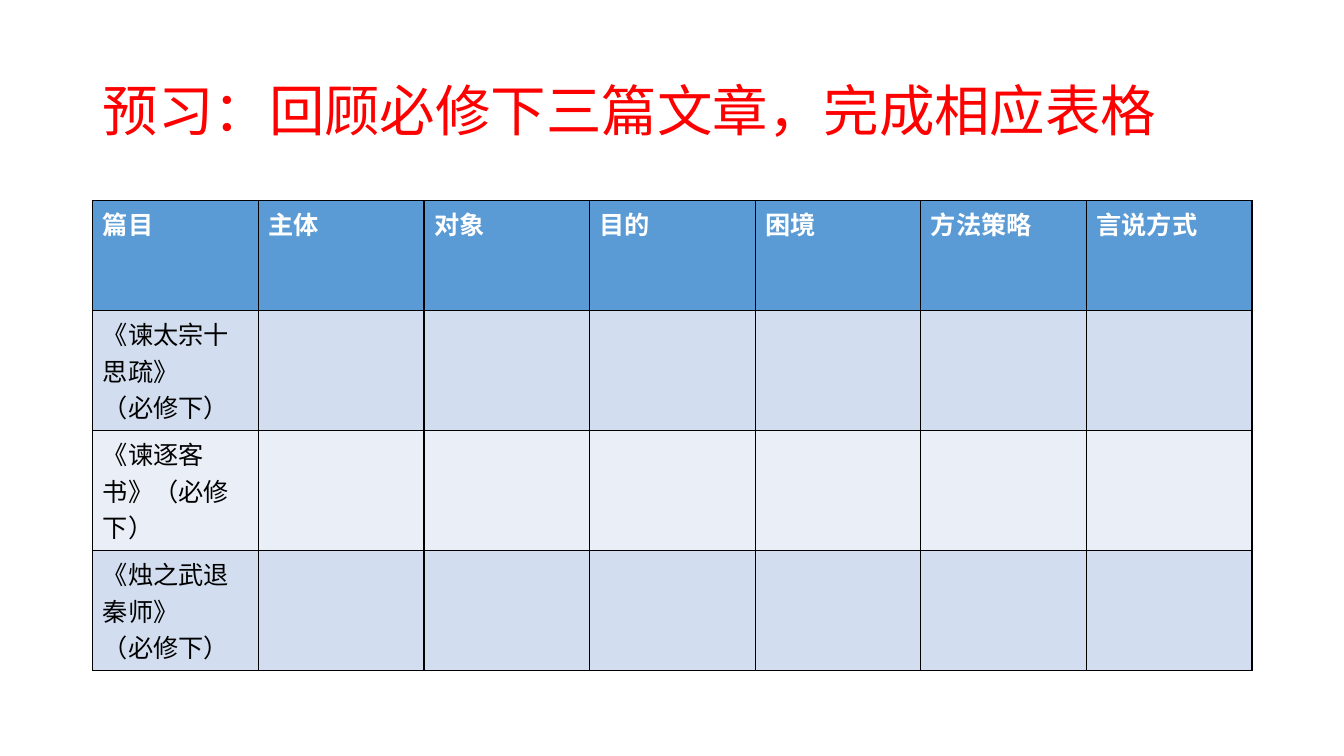
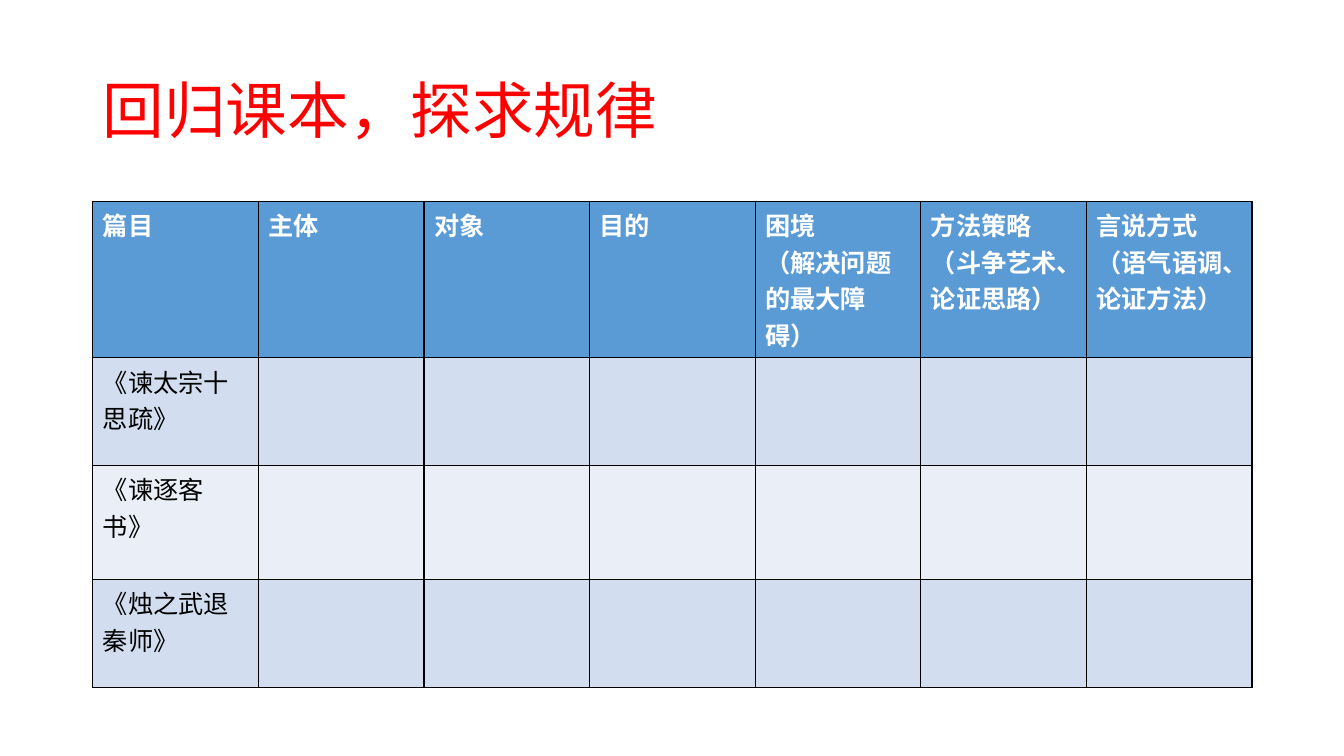
from lxml.etree import SubElement
from pptx import Presentation
from pptx.dml.color import RGBColor
from pptx.enum.lang import MSO_LANGUAGE_ID
from pptx.enum.text import MSO_ANCHOR
from pptx.oxml.ns import qn
from pptx.util import Inches, Pt

COLORS = {
    "title": "FF0000",
    "header": "5B9BD5",
    "header_text": "FFFFFF",
    "odd_row": "D2DEEF",
    "even_row": "EAEFF7",
    "body_text": "000000",
    "border": "000000",
}
FONT = "Calibri"
LEFT, WIDTH = 0.92, 11.5
TITLE_TOP, TITLE_HEIGHT = 0.4, 1.45
BORDER_SIDES = ("a:lnL", "a:lnR", "a:lnT", "a:lnB")

SLIDES = [
    {
        "title": "预习：回顾必修下三篇文章，完成相应表格",
        "title_size": 39.6,
        "table_top": 1.99,
        "row_heights": [1.09, 1.19, 1.19, 1.19],
        "headers": ["篇目", "主体", "对象", "目的", "困境", "方法策略", "言说方式"],
        "essays": [
            "《谏太宗十思疏》\n（必修下）",
            "《谏逐客书》（必修下）",
            "《烛之武退秦师》\n（必修下）",
        ],
    },
    {
        "title": "回归课本，探求规律",
        "title_size": 44,
        "table_top": 2,
        "row_heights": [1.55, 1.07, 1.13, 1.07],
        "headers": [
            "篇目", "主体", "对象", "目的",
            "困境\n（解决问题的最大障碍）",
            "方法策略\n（斗争艺术、论证思路）",
            "言说方式（语气语调、论证方法）",
        ],
        "essays": ["《谏太宗十思疏》", "《谏逐客书》", "《烛之武退秦师》"],
    },
]


def style_text(text_frame, size, color, bold=False):
    for paragraph in text_frame.paragraphs:
        font = paragraph.font
        font.name = FONT
        font.size = Pt(size)
        font.bold = bold
        font.color.rgb = RGBColor.from_string(COLORS[color])
        font.language_id = MSO_LANGUAGE_ID.SIMPLIFIED_CHINESE


def add_borders(cell):
    properties = cell._tc.get_or_add_tcPr()
    for index, side in enumerate(BORDER_SIDES):
        line = SubElement(properties, qn(side), w=str(Pt(1)))
        fill = SubElement(line, qn("a:solidFill"))
        SubElement(fill, qn("a:srgbClr"), val=COLORS["border"])
        properties.insert(index, line)


def add_title(slide, text, size):
    title = slide.shapes.add_textbox(
        Inches(LEFT), Inches(TITLE_TOP), Inches(WIDTH), Inches(TITLE_HEIGHT))
    frame = title.text_frame
    frame.word_wrap = True
    frame.vertical_anchor = MSO_ANCHOR.MIDDLE
    frame.text = text
    frame.paragraphs[0].line_spacing = 0.9
    style_text(frame, size, "title")


def add_essay_table(slide, headers, essays, top, row_heights):
    rows = [headers] + [[essay] + [""] * (len(headers) - 1) for essay in essays]
    table = slide.shapes.add_table(
        len(rows), len(headers), Inches(LEFT), Inches(top),
        Inches(WIDTH), Inches(sum(row_heights))).table
    for column in table.columns:
        column.width = Inches(WIDTH / len(headers))
    for row_index, texts in enumerate(rows):
        table.rows[row_index].height = Inches(row_heights[row_index])
        is_header = row_index == 0
        band = "header" if is_header else "odd_row" if row_index % 2 else "even_row"
        for column_index, text in enumerate(texts):
            cell = table.cell(row_index, column_index)
            cell.text = text
            cell.fill.solid()
            cell.fill.fore_color.rgb = RGBColor.from_string(COLORS[band])
            style_text(cell.text_frame, 18,
                       "header_text" if is_header else "body_text", is_header)
            add_borders(cell)


def main():
    presentation = Presentation()
    presentation.slide_width = Inches(13.33)
    presentation.slide_height = Inches(7.5)
    for content in SLIDES:
        slide = presentation.slides.add_slide(presentation.slide_layouts[6])
        add_title(slide, content["title"], content["title_size"])
        add_essay_table(slide, content["headers"], content["essays"],
                        content["table_top"], content["row_heights"])
    presentation.save("out.pptx")


if __name__ == "__main__":
    main()
